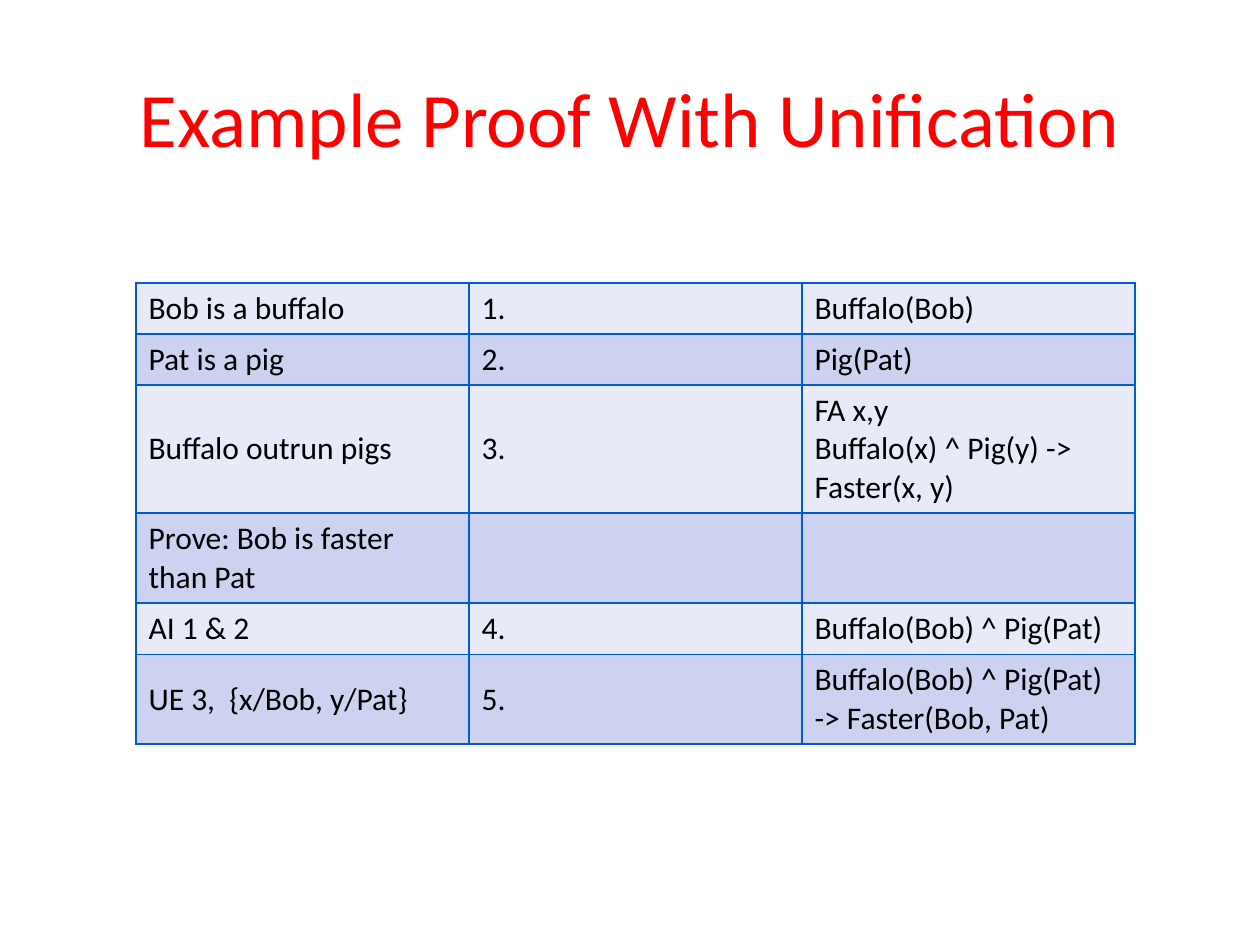
import pptx
import pptx.dml.color
import pptx.enum.text
import pptx.oxml
import pptx.util

RGBColor = pptx.dml.color.RGBColor
RED = RGBColor(0xFF, 0x00, 0x00)
BLACK = RGBColor(0x00, 0x00, 0x00)
BORDER = RGBColor(0x00, 0x5B, 0xD3)
BANDS = (RGBColor(0xE7, 0xEA, 0xF7), RGBColor(0xCC, 0xD2, 0xEF))
FONT = "Calibri"

TITLE = "Example Proof With Unification"
# Row height in px, then statement, step number, formula
PROOF = [
    (51, "Bob is a buffalo", "1.", "Buffalo(Bob)"),
    (51, "Pat is a pig", "2.", "Pig(Pat)"),
    (128, "Buffalo outrun pigs", "3.", "FA x,y\vBuffalo(x) ^ Pig(y) -> Faster(x, y)"),
    (90, "Prove: Bob is faster than Pat", "", ""),
    (51, "AI 1 & 2", "4.", "Buffalo(Bob) ^ Pig(Pat)"),
    (90, "UE 3,  {x/Bob, y/Pat}", "5.", "Buffalo(Bob) ^ Pig(Pat) -> Faster(Bob, Pat)"),
]
TABLE_LEFT, TABLE_TOP, COLUMN_WIDTH, COLUMNS = 136, 283, 333, 3


def px(n):
    return pptx.util.Emu(round(n * 914400 / 126))


def style(p, size, color):
    p.font.name = FONT
    p.font.size = pptx.util.Pt(size)
    p.font.color.rgb = color


def add_borders(cell):
    tc_pr = cell._tc.get_or_add_tcPr()
    for i, side in enumerate(("lnL", "lnR", "lnT", "lnB")):
        tc_pr.insert(i, pptx.oxml.parse_xml(
            f'<a:{side} xmlns:a="http://schemas.openxmlformats.org/drawingml/2006/main" w="12700">'
            f'<a:solidFill><a:srgbClr val="{BORDER}"/></a:solidFill></a:{side}>'))


def add_title(s):
    title = s.shapes.title
    title.left, title.top, title.width, title.height = px(63), px(38), px(1134), px(157)
    tf = title.text_frame
    tf.text = TITLE
    tf.vertical_anchor = pptx.enum.text.MSO_ANCHOR.MIDDLE
    p = tf.paragraphs[0]
    p.alignment = pptx.enum.text.PP_ALIGN.CENTER
    style(p, 44, RED)


def add_proof_table(s):
    height = sum(row[0] for row in PROOF)
    table = s.shapes.add_table(len(PROOF), COLUMNS, px(TABLE_LEFT), px(TABLE_TOP),
                               px(COLUMN_WIDTH * COLUMNS), px(height)).table
    table.first_row = False
    for column in table.columns:
        column.width = px(COLUMN_WIDTH)
    for i, (row_height, *texts) in enumerate(PROOF):
        table.rows[i].height = px(row_height)
        for j, text in enumerate(texts):
            cell = table.cell(i, j)
            cell.text = text
            cell.vertical_anchor = pptx.enum.text.MSO_ANCHOR.MIDDLE
            cell.fill.solid()
            cell.fill.fore_color.rgb = BANDS[i % 2]
            style(cell.text_frame.paragraphs[0], 18, BLACK)
            add_borders(cell)


def main():
    prs = pptx.Presentation()
    prs.slide_width, prs.slide_height = px(1260), px(945)
    s = prs.slides.add_slide(prs.slide_layouts[5])
    add_title(s)
    add_proof_table(s)
    prs.save("out.pptx")


if __name__ == "__main__":
    main()
